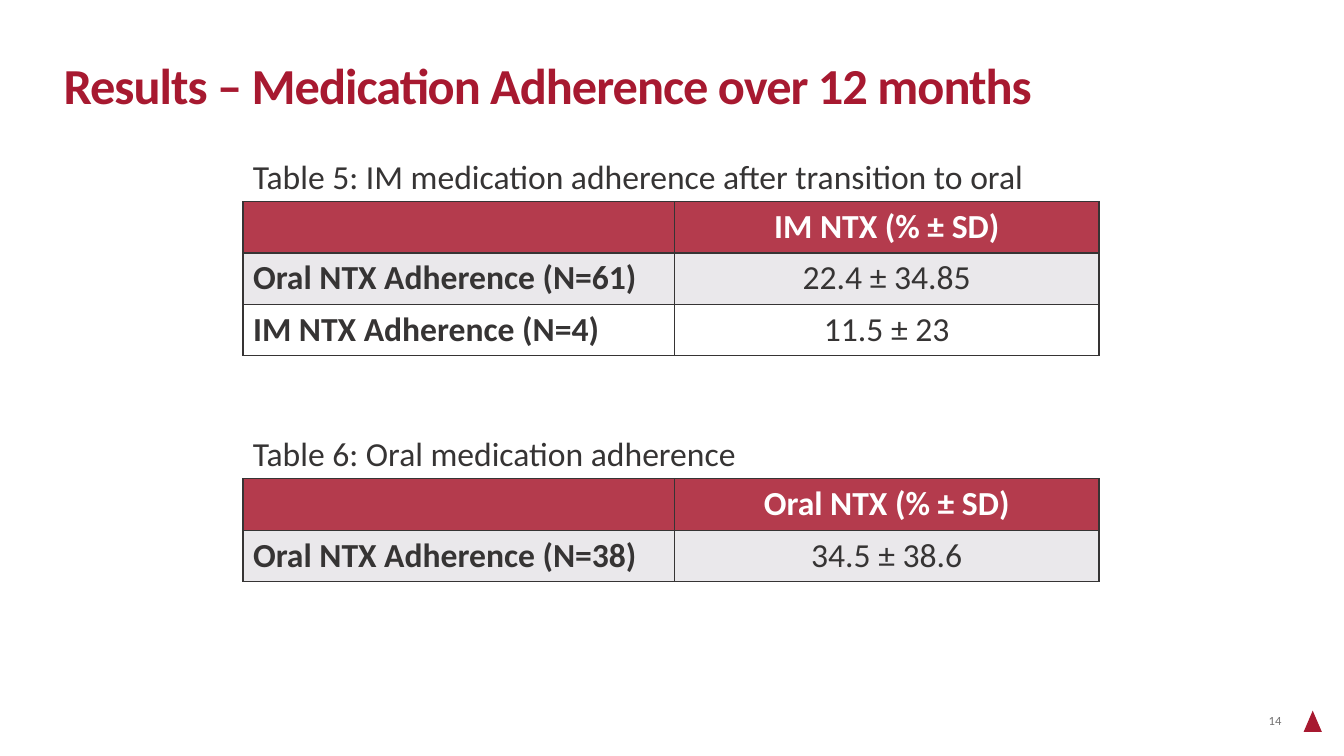
"""Build a results slide with two captioned tables on medication adherence."""
import dataclasses
import typing

import lxml.etree
import pptx
import pptx.dml.color
import pptx.enum.shapes
import pptx.enum.text
import pptx.oxml.ns
import pptx.util

Inches = pptx.util.Inches
ALIGN = pptx.enum.text.PP_ALIGN
ANCHOR = pptx.enum.text.MSO_ANCHOR


@dataclasses.dataclass(frozen=True)
class Theme:
    font: str = "Calibri"
    red: str = "A71930"
    head: str = "A7192F"
    ink: str = "363434"
    band: str = "EAE8EB"
    white: str = "FFFFFF"
    title: float = 36
    body: float = 24
    small: float = 9


@dataclasses.dataclass(frozen=True)
class Panel:
    top: float
    label: str
    width: float
    head: str
    rows: tuple[tuple[str, str], ...]


THEME = Theme()
LEFT = 2.41
LABEL_H = 0.5
ROW_H = 0.51
COLS = (4.28, 4.21)
PANELS = (
    Panel(1.5, "Table 5: IM medication adherence after transition to oral", 7.92, "IM NTX (% ± SD)",
          (("Oral NTX Adherence (N=61)", "22.4 ± 34.85"), ("IM NTX Adherence (N=4)", "11.5 ± 23"))),
    Panel(4.25, "Table 6: Oral medication adherence", 5.12, "Oral NTX (% ± SD)",
          (("Oral NTX Adherence (N=38)", "34.5 ± 38.6"),)),
)


def paint(fill: typing.Any, color: str) -> None:
    fill.solid()
    fill.fore_color.rgb = pptx.dml.color.RGBColor.from_string(color)


def fade(node: typing.Any, percent: int) -> None:
    for color in node.xpath("./a:solidFill/a:srgbClr"):
        alpha = lxml.etree.SubElement(color, pptx.oxml.ns.qn("a:alpha"))
        alpha.set("val", str(percent * 1000))


def write(frame: typing.Any, text: str, *, size: float = THEME.body, color: str = THEME.ink,
          bold: bool = False, align: ALIGN = ALIGN.LEFT) -> typing.Any:
    line = frame.paragraphs[0]
    line.alignment = align
    run = line.add_run()
    run.text = text
    run.font.name = THEME.font
    run.font.size = pptx.util.Pt(size)
    run.font.bold = bold
    paint(run.font.fill, color)
    return run


def inset(frame: typing.Any, side: float, edge: float) -> None:
    frame.margin_left = frame.margin_right = Inches(side)
    frame.margin_top = frame.margin_bottom = Inches(edge)


def add_box(slide: typing.Any, left: float, top: float, width: float, height: float) -> typing.Any:
    frame = slide.shapes.add_textbox(Inches(left), Inches(top), Inches(width), Inches(height)).text_frame
    frame.word_wrap = False
    return frame


def frame_cell(cell: typing.Any) -> None:
    props = cell._tc.get_or_add_tcPr()
    for side in ("lnL", "lnR", "lnT", "lnB"):
        line = lxml.etree.SubElement(props, pptx.oxml.ns.qn(f"a:{side}"), w=str(pptx.util.Pt(1)))
        fill = lxml.etree.SubElement(line, pptx.oxml.ns.qn("a:solidFill"))
        lxml.etree.SubElement(fill, pptx.oxml.ns.qn("a:srgbClr"), val=THEME.ink)


def add_panel(slide: typing.Any, panel: Panel) -> None:
    write(add_box(slide, LEFT, panel.top, panel.width, LABEL_H), panel.label)
    rows = (("", panel.head), *panel.rows)
    table = slide.shapes.add_table(
        len(rows), len(COLS), Inches(LEFT), Inches(panel.top + LABEL_H),
        Inches(sum(COLS)), Inches(ROW_H * len(rows))).table
    for col, width in zip(table.columns, COLS):
        col.width = Inches(width)
    for r, row in enumerate(rows):
        for c, text in enumerate(row):
            cell = table.cell(r, c)
            frame_cell(cell)
            if r == 0:
                paint(cell.fill, THEME.head)
                fade(cell._tc.tcPr, 85)
            else:
                paint(cell.fill, THEME.band if r % 2 else THEME.white)
            if text:
                write(cell.text_frame, text, bold=r == 0 or c == 0,
                      color=THEME.ink if r else THEME.white,
                      align=ALIGN.CENTER if c else ALIGN.LEFT)


def add_title(slide: typing.Any, text: str) -> None:
    title = slide.shapes.title
    title.left, title.top, title.width, title.height = map(Inches, (0.63, 0.6, 12.08, 0.55))
    frame = title.text_frame
    inset(frame, 0, 0)
    frame.vertical_anchor = ANCHOR.MIDDLE
    run = write(frame, text, size=THEME.title, color=THEME.red, bold=True)
    run.font._element.set("spc", "-70")
    frame.paragraphs[0].line_spacing = 0.9


def add_foot(slide: typing.Any, text: str) -> None:
    mark = slide.shapes.add_shape(
        pptx.enum.shapes.MSO_SHAPE.ISOSCELES_TRIANGLE,
        Inches(12.93), Inches(7.05), Inches(0.18), Inches(0.21))
    mark.shadow.inherit = False
    paint(mark.fill, THEME.red)
    mark.line.fill.background()
    frame = add_box(slide, 12.18, 7.03, 0.53, 0.23)
    inset(frame, 0, 0.04)
    frame.vertical_anchor = ANCHOR.BOTTOM
    run = write(frame, text, size=THEME.small, align=ALIGN.RIGHT)
    fade(run.font._element, 70)


def main() -> None:
    deck = pptx.Presentation()
    deck.slide_width, deck.slide_height = Inches(13.33), Inches(7.5)
    slide = deck.slides.add_slide(deck.slide_layouts[5])
    paint(slide.background.fill, THEME.white)
    add_title(slide, "Results – Medication Adherence over 12 months")
    for panel in PANELS:
        add_panel(slide, panel)
    add_foot(slide, "14")
    deck.save("out.pptx")


if __name__ == "__main__":
    main()
